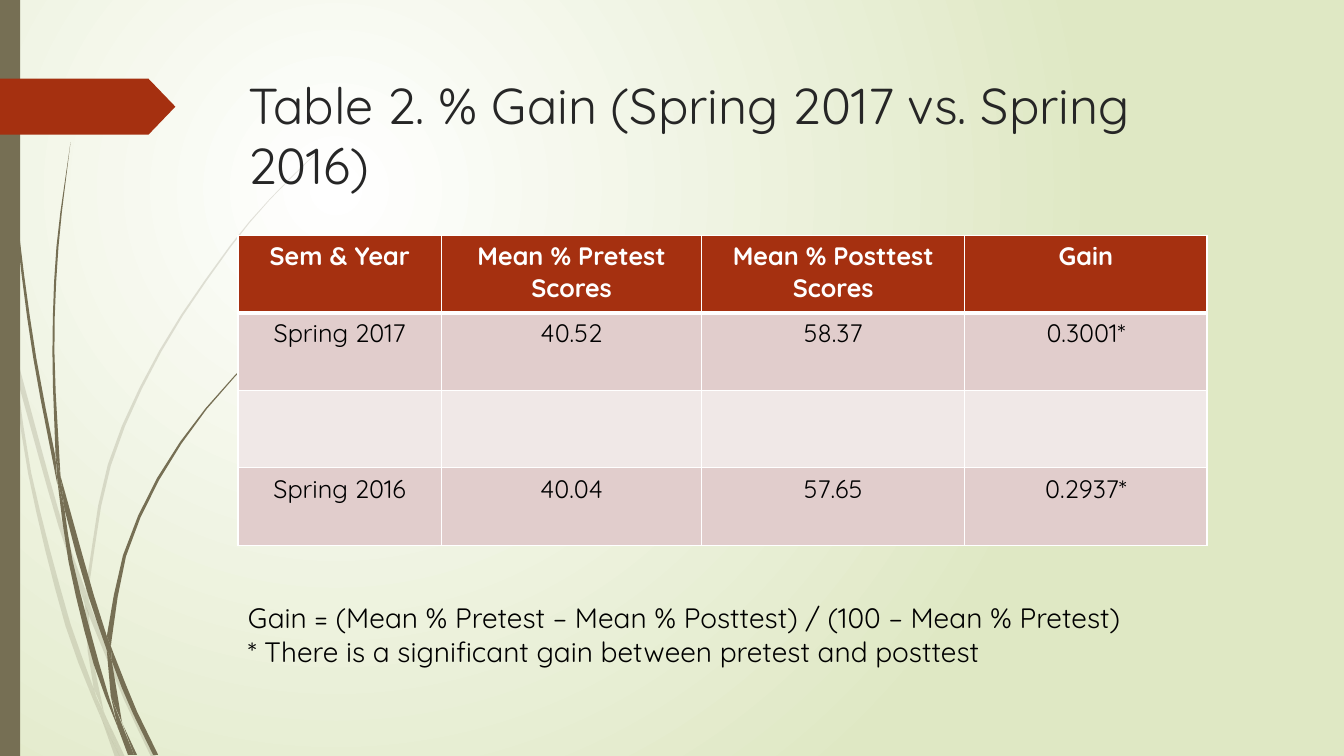
import math

import pptx
import pptx.dml.color
import pptx.enum.shapes
import pptx.enum.text
import pptx.oxml
import pptx.oxml.ns
import pptx.util

Pt = pptx.util.Pt

COLORS = {
    "olive": "766F54", "rust": "A53010", "white": "FFFFFF", "sage": "DFE8C4",
    "title": "262626", "black": "000000", "band": "E1CDCC", "pale": "F0E8E7",
}
FONT = "Quicksand"
GRASS_UNIT = Pt(0.72)
STEP_LENGTH = 50

# Each blade is its two edges, as points in units of GRASS_UNIT.
FAINT_BLADES = [
    ([(11, 350), (9, 322), (0, 282)], [(0, 299), (10, 344), (11, 350)]),
    ([(17, 376), (58, 522), (84, 599)], [(85, 586), (62, 520), (14, 345)]),
    ([(88, 610), (123, 694), (150, 751)], [(155, 751), (127, 692), (92, 607), (88, 596)]),
    ([(105, 711), (119, 751)], [(124, 751)]),
    ([(11, 350), (28, 470), (65, 621), (92, 693), (101, 714)],
     [(99, 707), (93, 683), (70, 619), (31, 469), (17, 376)]),
    ([(84, 599), (87, 646), (93, 683), (105, 711)], [(103, 706), (91, 646), (88, 608)]),
    ([(88, 596), (88, 584), (110, 462), (160, 349), (229, 245), (268, 198), (312, 154)],
     [(312, 153), (268, 197), (228, 244), (158, 348), (107, 461), (85, 584)]),
    ([(101, 714), (114, 751)], [(119, 751)]),
    ([(88, 610), (88, 596)], [(85, 586), (84, 599)]),
    ([(93, 683), (101, 714), (119, 751)], [(105, 711), (96, 692)]),
]
SOLID_BLADES = [
    ([(3, 0), (7, 110), (17, 233), (33, 355), (57, 481)],
     [(55, 453), (36, 355), (19, 232), (8, 109), (4, 0)]),
    ([(60, 472), (64, 505), (88, 592), (106, 645)], [(106, 631), (93, 590), (60, 472)]),
    ([(110, 641), (111, 656), (132, 708), (152, 749)], [(157, 749), (136, 706), (113, 649)]),
    ([(57, 477), (68, 557), (93, 659), (117, 722)],
     [(116, 717), (98, 657), (72, 556), (64, 505)]),
    ([(60, 472), (54, 349), (58, 245), (70, 141)], [(70, 141), (56, 245), (52, 349), (55, 449)]),
    ([(122, 719), (133, 749)], [(136, 749)]),
    ([(55, 449), (57, 477), (64, 505)], [(60, 472)]),
    ([(110, 641), (111, 633), (125, 552), (158, 476), (205, 406), (261, 344)],
     [(260, 344), (204, 405), (156, 474), (122, 551), (106, 631)]),
    ([(117, 722), (127, 749)], [(131, 749)]),
    ([(106, 645), (110, 691), (122, 719)], [(121, 716), (111, 656)]),
    ([(106, 631), (106, 645), (111, 656)], [(110, 641)]),
    ([(110, 691), (117, 722), (130, 749)], [(133, 749), (116, 706)]),
]

GAIN_ROWS = [
    ["Sem & Year", "Mean % Pretest Scores", "Mean % Posttest Scores", "Gain"],
    ["Spring 2017", "40.52", "58.37", "0.3001*"],
    ["", "", "", ""],
    ["Spring 2016", "40.04", "57.65", "0.2937*"],
]
NOTES = [
    "Gain = (Mean % Pretest – Mean % Posttest) / (100 – Mean % Pretest)",
    "* There is a significant gain between pretest and posttest",
]


def rgb(color):
    return pptx.dml.color.RGBColor.from_string(COLORS[color])


def xml_element(tag, body=""):
    namespace = pptx.oxml.ns.nsdecls("a")
    name = tag.split()[0]
    return pptx.oxml.parse_xml(f"<a:{tag} {namespace}>{body}</a:{name}>")


def smooth(anchors):
    """Sample a Bezier curve whose tangent at each anchor follows its neighbours."""
    if len(anchors) < 3:
        return anchors
    tangents = []
    for i in range(len(anchors)):
        before, after = anchors[max(i - 1, 0)], anchors[min(i + 1, len(anchors) - 1)]
        length = math.dist(before, after)
        tangents.append([(b - a) / length for a, b in zip(before, after)])
    points = [anchors[0]]
    for i, (start, end) in enumerate(zip(anchors, anchors[1:])):
        reach = math.dist(start, end) / 3
        steps = math.ceil(3 * reach / STEP_LENGTH)
        for step in range(1, steps + 1):
            t = step / steps
            points.append(tuple(
                (1 - t) ** 3 * a + 3 * (1 - t) ** 2 * t * (a + reach * u)
                + 3 * (1 - t) * t ** 2 * (b - reach * v) + t ** 3 * b
                for a, b, u, v in zip(start, end, tangents[i], tangents[i + 1])))
    return points


class SlideBuilder:
    def __init__(self, presentation):
        self.slide = presentation.slides.add_slide(presentation.slide_layouts[5])
        self.shapes = self.slide.shapes

    def background(self, center, edge):
        fill = self.slide.background.fill
        fill.gradient()
        for stop, color, position in zip(fill.gradient_stops, (center, edge), (0, 1)):
            stop.color.rgb = rgb(color)
            stop.position = position
        linear = self.slide.element.find(".//" + pptx.oxml.ns.qn("a:lin"))
        linear.getparent().replace(linear, xml_element(
            'path path="circle"', '<a:fillToRect l="50000" t="50000" r="100000" b="100000"/>'))

    def paint(self, shape, color, opacity=100):
        shape.shadow.inherit = False
        shape.fill.solid()
        shape.fill.fore_color.rgb = rgb(color)
        shape.line.fill.background()
        if opacity < 100:
            solid = shape.element.spPr.find(pptx.oxml.ns.qn("a:solidFill"))
            solid[0].append(xml_element(f'alpha val="{opacity * 1000}"'))

    def blade(self, edges, color, opacity):
        outline = [(x * GRASS_UNIT, y * GRASS_UNIT) for edge in edges for x, y in smooth(edge)]
        builder = self.shapes.build_freeform(*outline[0])
        builder.add_line_segments(outline[1:], close=True)
        self.paint(builder.convert_to_shape(), color, opacity)

    def block(self, kind, left, top, width, height, color):
        shape = self.shapes.add_shape(kind, Pt(left), Pt(top), Pt(width), Pt(height))
        self.paint(shape, color)
        return shape

    def style(self, paragraph, size, color, bold=False, alignment=pptx.enum.text.PP_ALIGN.LEFT):
        paragraph.alignment = alignment
        font = paragraph.font
        font.name, font.size, font.bold = FONT, Pt(size), bold
        font.color.rgb = rgb(color)

    def title(self, text, left, top, width, height):
        shape = self.shapes.title
        shape.left, shape.top, shape.width, shape.height = Pt(left), Pt(top), Pt(width), Pt(height)
        frame = shape.text_frame
        frame.text = text
        frame.auto_size = pptx.enum.text.MSO_AUTO_SIZE.NONE
        frame.vertical_anchor = pptx.enum.text.MSO_ANCHOR.TOP
        self.style(frame.paragraphs[0], 36, "title")
        # The grass lies behind the title.
        shape.element.getparent().append(shape.element)

    def text(self, lines, left, top, width, height):
        frame = self.shapes.add_textbox(Pt(left), Pt(top), Pt(width), Pt(height)).text_frame
        frame.word_wrap = True
        frame.auto_size = pptx.enum.text.MSO_AUTO_SIZE.SHAPE_TO_FIT_TEXT
        frame.text = "\n".join(lines)
        for paragraph in frame.paragraphs:
            self.style(paragraph, 20, "black")

    def borders(self, cell, bottom):
        properties = cell._tc.get_or_add_tcPr()
        for side, width in (("L", 1), ("R", 1), ("T", 1), ("B", bottom)):
            properties.append(xml_element(
                f'ln{side} w="{Pt(width)}"',
                f'<a:solidFill><a:srgbClr val="{COLORS["white"]}"/></a:solidFill>'))

    def table(self, rows, left, top, column_widths, row_height):
        table = self.shapes.add_table(
            len(rows), len(column_widths), Pt(left), Pt(top),
            Pt(sum(column_widths)), Pt(row_height * len(rows))).table
        for column, width in zip(table.columns, column_widths):
            column.width = Pt(width)
        for i, values in enumerate(rows):
            table.rows[i].height = Pt(row_height)
            header = i == 0
            fill = "rust" if header else ("band" if i % 2 else "pale")
            for cell, value in zip(table.rows[i].cells, values):
                cell.text = value
                self.style(cell.text_frame.paragraphs[0], 18, "white" if header else "black",
                           header, pptx.enum.text.PP_ALIGN.CENTER)
                self.borders(cell, 3 if header else 1)
                cell.fill.solid()
                cell.fill.fore_color.rgb = rgb(fill)


def main():
    presentation = pptx.Presentation()
    presentation.slide_width, presentation.slide_height = Pt(960), Pt(540)
    builder = SlideBuilder(presentation)
    builder.background("white", "sage")
    for blades, opacity in ((FAINT_BLADES, 20), (SOLID_BLADES, 100)):
        for edges in blades:
            builder.blade(edges, "olive", opacity)
    kinds = pptx.enum.shapes.MSO_SHAPE
    builder.block(kinds.RECTANGLE, 0, 0, 14.4, 540, "olive")
    arrow = builder.block(kinds.PENTAGON, 0, 56.2, 125.3, 40, "rust")
    arrow.adjustments[0] = 0.48
    builder.title("Table 2. % Gain (Spring 2017 vs. Spring 2016)", 170, 49, 736, 101)
    builder.table(GAIN_ROWS, 170, 168, [145.4, 185.8, 188, 173], 55.4)
    builder.text(NOTES, 170, 425.5, 692.6, 55.4)
    presentation.save("out.pptx")


if __name__ == "__main__":
    main()
